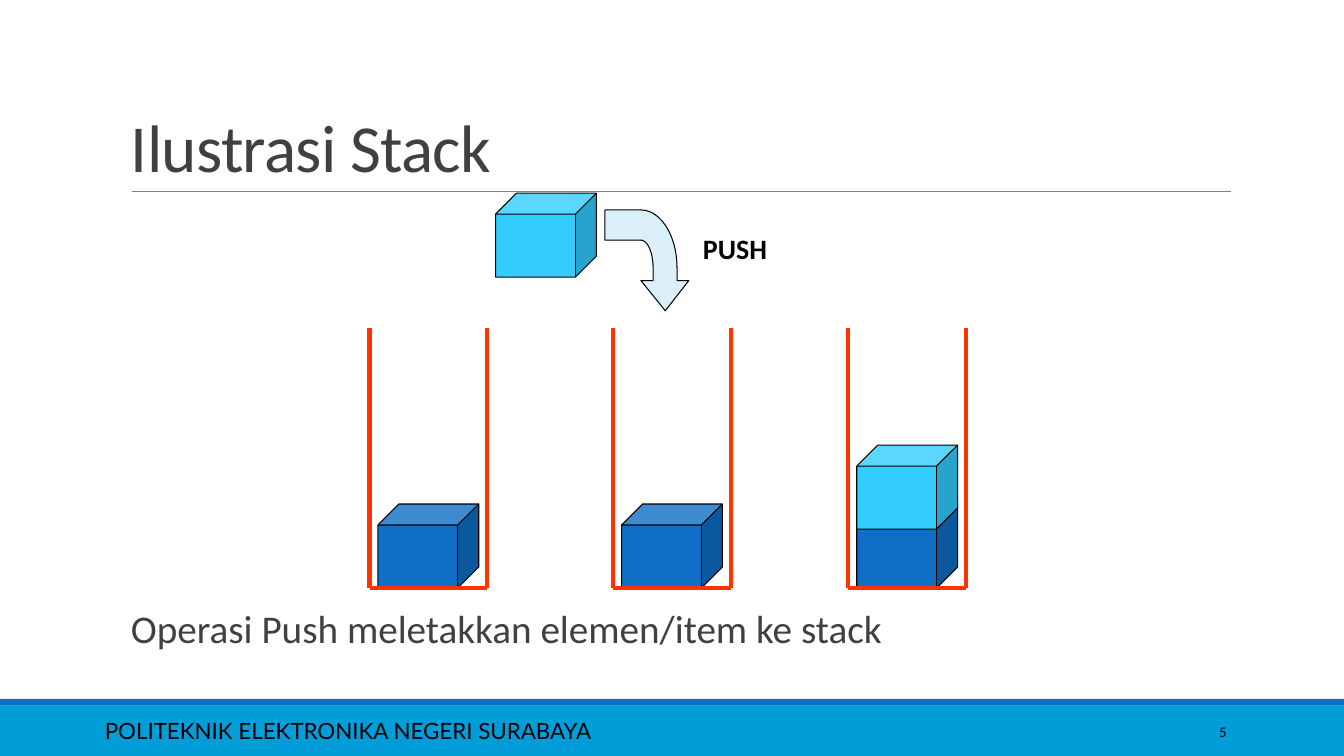
import dataclasses
import math
import typing

import pptx
import pptx.dml.color
import pptx.enum.shapes
import pptx.enum.text
import pptx.oxml
import pptx.oxml.ns
import pptx.util

COLS, ROWS = 160, 90
CELL = pptx.util.Inches(7.5) / ROWS
TINT = {
    "band": "009DD9",
    "blue": "0F6FC6",
    "sky": "33CCFF",
    "pale": "DBEFF9",
    "red": "FF3300",
    "rule": "808080",
    "text": "404040",
    "black": "000000",
}
KIND = pptx.enum.shapes.MSO_SHAPE
SIDE = pptx.enum.text.PP_ALIGN
HOLD = pptx.enum.text.MSO_ANCHOR
Point = tuple[float, float]


@dataclasses.dataclass
class Label:
    text: str
    col: float
    row: float
    wide: float
    high: float
    size: float
    tint: str = "black"
    font: str = "Calibri"
    bold: bool = False
    side: typing.Any = SIDE.LEFT
    hold: typing.Any = HOLD.MIDDLE
    pitch: float = 1.0
    track: int = 0


@dataclasses.dataclass
class Block:
    col: float
    row: float
    tint: str


@dataclasses.dataclass
class Bin:
    col: float
    blocks: list[Block]


BANDS = [(84, 6, "band"), (83.2, 0.8, "blue")]
LABELS = [
    Label("POLITEKNIK ELEKTRONIKA NEGERI SURABAYA", 11.3, 84.6, 101, 4.8, 16, font="Lato"),
    Label("Ilustrasi Stack", 14.4, 3.7, 132, 19.1, 48, "text",
          hold=HOLD.BOTTOM, pitch=0.85, track=-50),
    Label("Operasi Push meletakkan elemen/item ke stack", 14.4, 72, 132, 7.4, 28, "text",
          hold=HOLD.TOP, pitch=0.9),
    Label("5", 130, 84.7, 17.2, 4.8, 10.5, side=SIDE.RIGHT),
]
PUSH = Label("PUSH", 82, 27, 11, 5.3, 20, bold=True, side=SIDE.CENTER, hold=HOLD.TOP)
ITEM = Block(59, 23, "sky")
BINS = [
    Bin(44, [Block(45, 60, "blue")]),
    Bin(73, [Block(74, 60, "blue")]),
    Bin(101, [Block(102, 60, "blue"), Block(102, 53, "sky")]),
]
WIDE, TOP, BASE = 14, 39, 70


def span(cells: float) -> int:
    return round(cells * CELL)


def hue(name: str) -> pptx.dml.color.RGBColor:
    return pptx.dml.color.RGBColor.from_string(TINT[name])


def paint(shape: typing.Any, fill: str, edge: bool = True) -> None:
    shape.shadow.inherit = False
    shape.fill.solid()
    shape.fill.fore_color.rgb = hue(fill)
    if edge:
        shape.line.color.rgb = hue("black")
        shape.line.width = pptx.util.Pt(0.75)
    else:
        shape.line.fill.background()


def draw_line(shapes: typing.Any, start: Point, end: Point, tint: str, size: float) -> None:
    line = shapes.add_connector(
        pptx.enum.shapes.MSO_CONNECTOR.STRAIGHT, *map(span, start + end))
    line.line.color.rgb = hue(tint)
    line.line.width = pptx.util.Pt(size)
    line._element.spPr.append(pptx.oxml.parse_xml(
        f"<a:effectLst {pptx.oxml.ns.nsdecls('a')}/>"))


def draw_text(shapes: typing.Any, label: Label) -> None:
    box = shapes.add_textbox(
        *map(span, (label.col, label.row, label.wide, label.high)))
    frame = box.text_frame
    frame.word_wrap = True
    frame.vertical_anchor = label.hold
    para = frame.paragraphs[0]
    para.alignment = label.side
    para.line_spacing = label.pitch
    run = para.add_run()
    run.text = label.text
    run.font.name = label.font
    run.font.size = pptx.util.Pt(label.size)
    run.font.bold = label.bold
    run.font.color.rgb = hue(label.tint)
    if label.track:
        run._r.get_or_add_rPr().set("spc", str(label.track))


def draw_block(shapes: typing.Any, block: Block) -> None:
    cube = shapes.add_shape(KIND.CUBE, *map(span, (block.col, block.row, 12, 10)))
    cube.adjustments[0] = 0.25
    paint(cube, block.tint)


def draw_bin(shapes: typing.Any, bin: Bin) -> None:
    group = shapes.add_group_shape().shapes
    draw_block(group, bin.blocks[0])
    left, right = bin.col, bin.col + WIDE
    ends = [(left, TOP), (left, BASE), (right, BASE), (right, TOP)]
    for start, end in zip(ends, ends[1:]):
        draw_line(group, start, end, "red", 3)
    for block in bin.blocks[1:]:
        draw_block(group, block)


def bend(wide: float, high: float) -> list[Point]:
    turns = [math.pi / 2 * step / 24 for step in range(25)]
    return [(76.3 + wide * math.cos(turn), 31.9 - high * math.sin(turn)) for turn in turns]


def draw_arrow(shapes: typing.Any) -> None:
    points = [(79.2, 37), (82, 33.4), (80.6, 33.4), *bend(4.3, 6.9),
              (72, 25), (72, 28.6), *reversed(bend(1.45, 3.3)),
              (77.75, 33.4), (76.3, 33.4)]
    first, *rest = [(span(col), span(row)) for col, row in points]
    form = shapes.build_freeform(*first)
    form.add_line_segments(rest, close=True)
    paint(form.convert_to_shape(), "pale")


def main() -> None:
    deck = pptx.Presentation()
    deck.slide_width, deck.slide_height = span(COLS), span(ROWS)
    shapes = deck.slides.add_slide(deck.slide_layouts[6]).shapes
    for row, high, tint in BANDS:
        band = shapes.add_shape(KIND.RECTANGLE, *map(span, (0, row, COLS, high)))
        paint(band, tint, edge=False)
    draw_line(shapes, (15.7, 22.8), (146.5, 22.8), "rule", 0.5)
    for label in LABELS:
        draw_text(shapes, label)
    for bin in BINS[:2]:
        draw_bin(shapes, bin)
    group = shapes.add_group_shape().shapes
    draw_block(group, ITEM)
    draw_arrow(group)
    draw_text(group, PUSH)
    draw_bin(shapes, BINS[2])
    deck.save("out.pptx")


if __name__ == "__main__":
    main()
